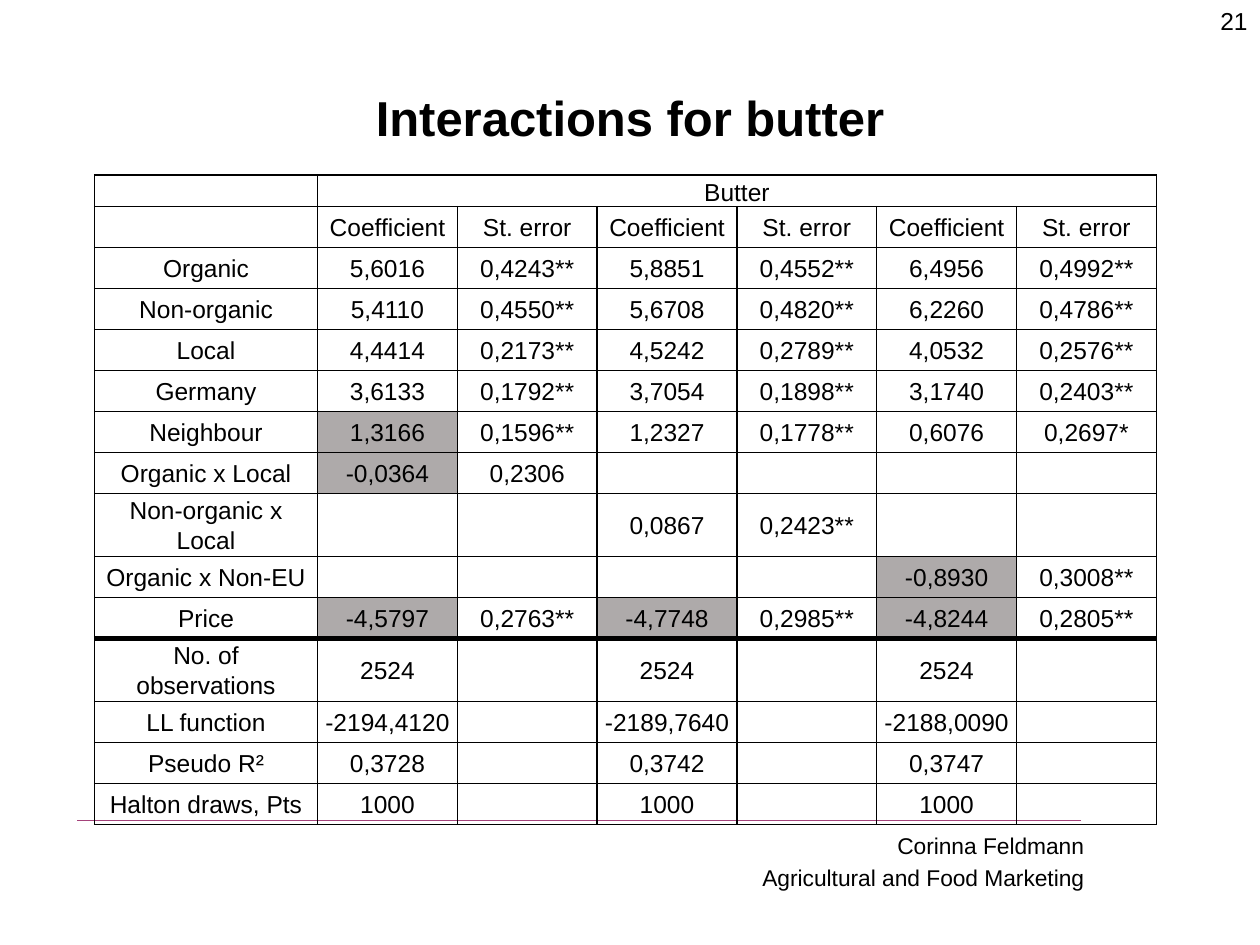
from lxml.etree import SubElement as Sub
from pptx import Presentation
from pptx.dml.color import RGBColor as RGB
from pptx.enum.shapes import MSO_CONNECTOR as Conn
from pptx.enum.text import MSO_ANCHOR as Anc, PP_ALIGN as Al
from pptx.oxml.ns import qn
from pptx.util import Pt

BLACK = RGB(0x00, 0x00, 0x00)
GREY = RGB(0xAE, 0xAA, 0xAA)
PLUM = RGB(0xA4, 0x42, 0x7A)
FONT = "Arial"
SIZE = 14

HEADS = ["Coefficient", "St. error"] * 3
ROWS = [
    ["", "Butter"],
    [""] + HEADS,
    ["Organic", "5,6016", "0,4243**", "5,8851", "0,4552**", "6,4956", "0,4992**"],
    ["Non-organic", "5,4110", "0,4550**", "5,6708", "0,4820**", "6,2260", "0,4786**"],
    ["Local", "4,4414", "0,2173**", "4,5242", "0,2789**", "4,0532", "0,2576**"],
    ["Germany", "3,6133", "0,1792**", "3,7054", "0,1898**", "3,1740", "0,2403**"],
    ["Neighbour", "1,3166", "0,1596**", "1,2327", "0,1778**", "0,6076", "0,2697*"],
    ["Organic x Local", "-0,0364", "0,2306"],
    ["Non-organic x Local", "", "", "0,0867", "0,2423**"],
    ["Organic x Non-EU", "", "", "", "", "-0,8930", "0,3008**"],
    ["Price", "-4,5797", "0,2763**", "-4,7748", "0,2985**", "-4,8244", "0,2805**"],
    ["No. of observations", "2524", "", "2524", "", "2524"],
    ["LL function", "-2194,4120", "", "-2189,7640", "", "-2188,0090"],
    ["Pseudo R²", "0,3728", "", "0,3742", "", "0,3747"],
    ["Halton draws, Pts", "1000", "", "1000", "", "1000"],
]
SHADED = {(6, 1), (7, 1), (9, 5), (10, 1), (10, 3), (10, 5)}
PRICE = 10
HIGH = {0: 17.25, 8: 34.4, 11: 34}
ROW_H = 23.45
NAME_W, COL_W = 127.5, 79.9


def add_run(para, text, size, bold=False):
    run = para.add_run()
    run.text = text
    font = run.font
    font.name, font.size, font.bold = FONT, Pt(size), bold
    font.color.rgb = BLACK


def add_text(slide, box, lines, size, align, anchor=Anc.TOP, bold=False, gap=0):
    frame = slide.shapes.add_textbox(*map(Pt, box)).text_frame
    frame.word_wrap = True
    frame.vertical_anchor = anchor
    for i, line in enumerate(lines):
        para = frame.add_paragraph() if i else frame.paragraphs[0]
        para.alignment = align
        if i:
            para.space_before = Pt(gap)
        add_run(para, line, size, bold)


def add_edges(cell, top, base):
    """Draw the four borders; top and base are widths in points."""
    props = cell._tc.get_or_add_tcPr()
    for side, width in (("L", 1), ("R", 1), ("T", top), ("B", base)):
        edge = Sub(props, qn(f"a:ln{side}"), w=str(Pt(width)))
        fill = Sub(edge, qn("a:solidFill"))
        Sub(fill, qn("a:srgbClr"), val=str(BLACK))


def fill_cell(cell, text, row, col):
    add_edges(cell, 3 if row == PRICE + 1 else 1, 3 if row == PRICE else 1)
    if (row, col) in SHADED:
        cell.fill.solid()
        cell.fill.fore_color.rgb = GREY
    else:
        cell.fill.background()
    cell.margin_left = cell.margin_right = Pt(3.6)
    cell.margin_top = cell.margin_bottom = Pt(0)
    cell.vertical_anchor = Anc.MIDDLE if row else Anc.BOTTOM
    para = cell.text_frame.paragraphs[0]
    para.alignment = Al.CENTER
    para.line_spacing = 1.07
    if text:
        add_run(para, text, SIZE)
    else:
        Sub(para._p, qn("a:endParaRPr"), sz=str(SIZE * 100))


def add_grid(slide, left, top):
    cols = len(HEADS) + 1
    highs = [HIGH.get(r, ROW_H) for r in range(len(ROWS))]
    width = NAME_W + COL_W * len(HEADS)
    table = slide.shapes.add_table(
        len(ROWS), cols, Pt(left), Pt(top), Pt(width), Pt(sum(highs))).table
    table.first_row = table.horz_banding = False
    for c, col in enumerate(table.columns):
        col.width = Pt(COL_W if c else NAME_W)
    for r, row in enumerate(ROWS):
        table.rows[r].height = Pt(highs[r])
        for c in range(cols):
            text = row[c] if c < len(row) else ""
            fill_cell(table.cell(r, c), text, r, c)
    table.cell(0, 1).merge(table.cell(0, cols - 1))


def add_foot(slide, left, top, width):
    rule = slide.shapes.add_connector(
        Conn.STRAIGHT, Pt(left + width), Pt(top), Pt(left), Pt(top))
    rule.line.color.rgb = PLUM
    rule.line.width = Pt(0.75)
    Sub(rule._element.spPr, qn("a:effectLst"))
    text_w = 300
    box = (left + width + 8.6 - text_w, top + 2.8, text_w, 42)
    add_text(slide, box, ["Corinna Feldmann", "Agricultural and Food Marketing"],
             13, Al.RIGHT, gap=3)


def main():
    deck = Presentation()
    deck.slide_width, deck.slide_height = Pt(720), Pt(540)
    slide = deck.slides.add_slide(deck.slide_layouts[6])
    add_foot(slide, 43.9, 468.7, 573.9)
    add_text(slide, (36, 21.6, 648, 90), ["Interactions for butter"],
             28, Al.CENTER, Anc.MIDDLE, bold=True)
    add_grid(slide, 54, 100)
    add_text(slide, (683.3, 0, 36.7, 37.4), ["21"], SIZE, Al.RIGHT)
    deck.save("out.pptx")


if __name__ == "__main__":
    main()
